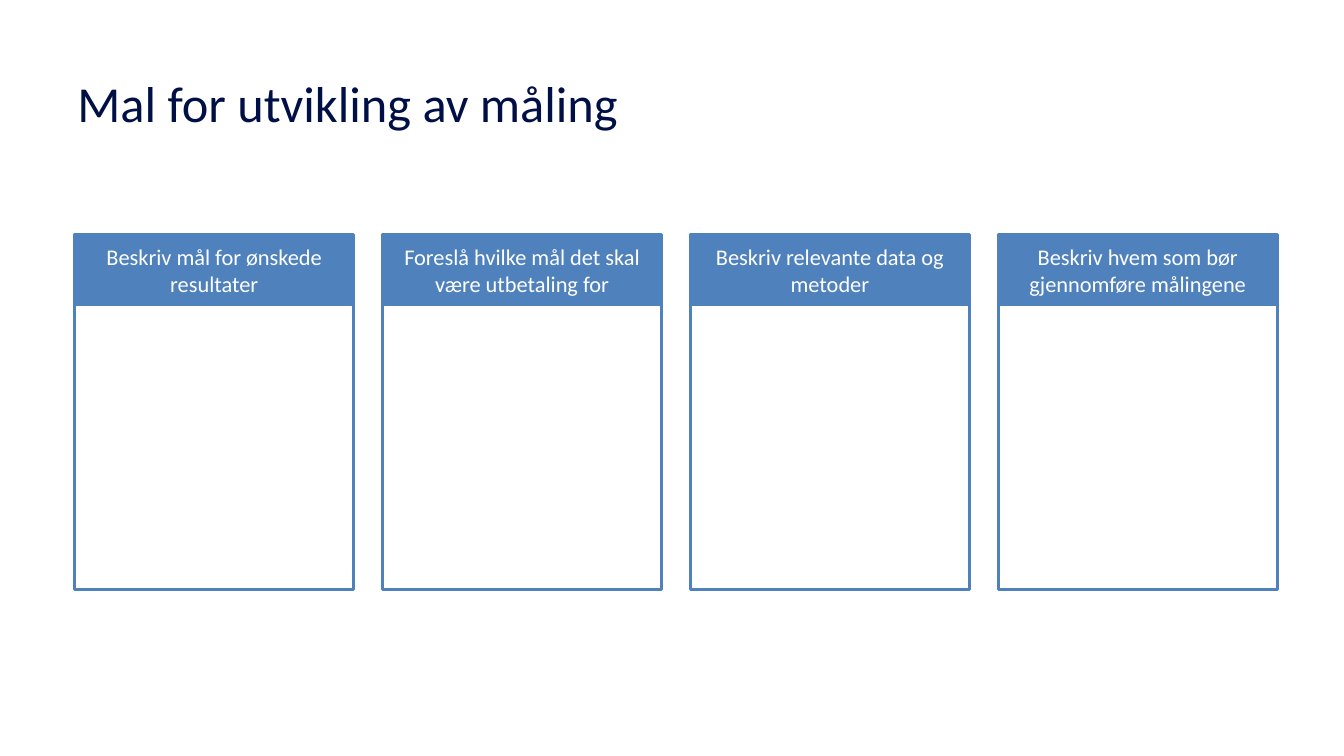
from dataclasses import dataclass

from pptx import Presentation
from pptx.dml.color import RGBColor
from pptx.enum import shapes, text
from pptx.util import Inches, Pt


@dataclass(frozen=True)
class Theme:
    font: str = "Calibri"
    navy: RGBColor = RGBColor(0x00, 0x10, 0x46)
    blue: RGBColor = RGBColor(0x4F, 0x81, 0xBD)
    white: RGBColor = RGBColor(0xFF, 0xFF, 0xFF)
    title_size: Pt = Pt(36)
    heading_size: Pt = Pt(16)
    border: Pt = Pt(2)


THEME = Theme()

HEADINGS = [
    "Beskriv mål for ønskede resultater",
    "Foreslå hvilke mål det skal være utbetaling for",
    "Beskriv relevante data og metoder",
    "Beskriv hvem som bør gjennomføre målingene",
]
FIRST_LEFT, LAST_LEFT = 0.74, 9.9
COLUMN_STEP = (LAST_LEFT - FIRST_LEFT) / (len(HEADINGS) - 1)
COLUMN_TOP, COLUMN_WIDTH = 2.33, 2.77
HEADING_HEIGHT, BODY_HEIGHT = 0.69, 2.83


def write(shape, wording, size, color, align):
    frame = shape.text_frame
    frame.word_wrap = True
    frame.vertical_anchor = text.MSO_ANCHOR.MIDDLE
    para = frame.paragraphs[0]
    para.text = wording
    para.alignment = align
    para.font.name = THEME.font
    para.font.size = size
    para.font.color.rgb = color


def add_title(page, wording):
    box = page.shapes.add_textbox(Inches(0.67), Inches(0.4), Inches(12), Inches(1.24))
    write(box, wording, THEME.title_size, THEME.navy, text.PP_ALIGN.LEFT)


def add_panel(page, left, top, height, fill):
    panel = page.shapes.add_shape(
        shapes.MSO_SHAPE.RECTANGLE,
        Inches(left), Inches(top), Inches(COLUMN_WIDTH), Inches(height),
    )
    panel.shadow.inherit = False
    panel.fill.solid()
    panel.fill.fore_color.rgb = fill
    panel.line.color.rgb = THEME.blue
    panel.line.width = THEME.border
    return panel


def add_column(page, left, wording):
    """Add an empty answer field with a filled heading on top."""
    add_panel(page, left, COLUMN_TOP + HEADING_HEIGHT, BODY_HEIGHT, THEME.white)
    heading = add_panel(page, left, COLUMN_TOP, HEADING_HEIGHT, THEME.blue)
    frame = heading.text_frame
    frame.margin_left = frame.margin_right = Inches(0.08)
    frame.margin_top = frame.margin_bottom = Inches(0.04)
    write(heading, wording, THEME.heading_size, THEME.white, text.PP_ALIGN.CENTER)


def main():
    deck = Presentation()
    deck.slide_width, deck.slide_height = Inches(13.33), Inches(7.5)
    page = deck.slides.add_slide(deck.slide_layouts[6])
    add_title(page, "Mal for utvikling av måling")
    for index, wording in enumerate(HEADINGS):
        add_column(page, FIRST_LEFT + index * COLUMN_STEP, wording)
    deck.save("out.pptx")


if __name__ == "__main__":
    main()
